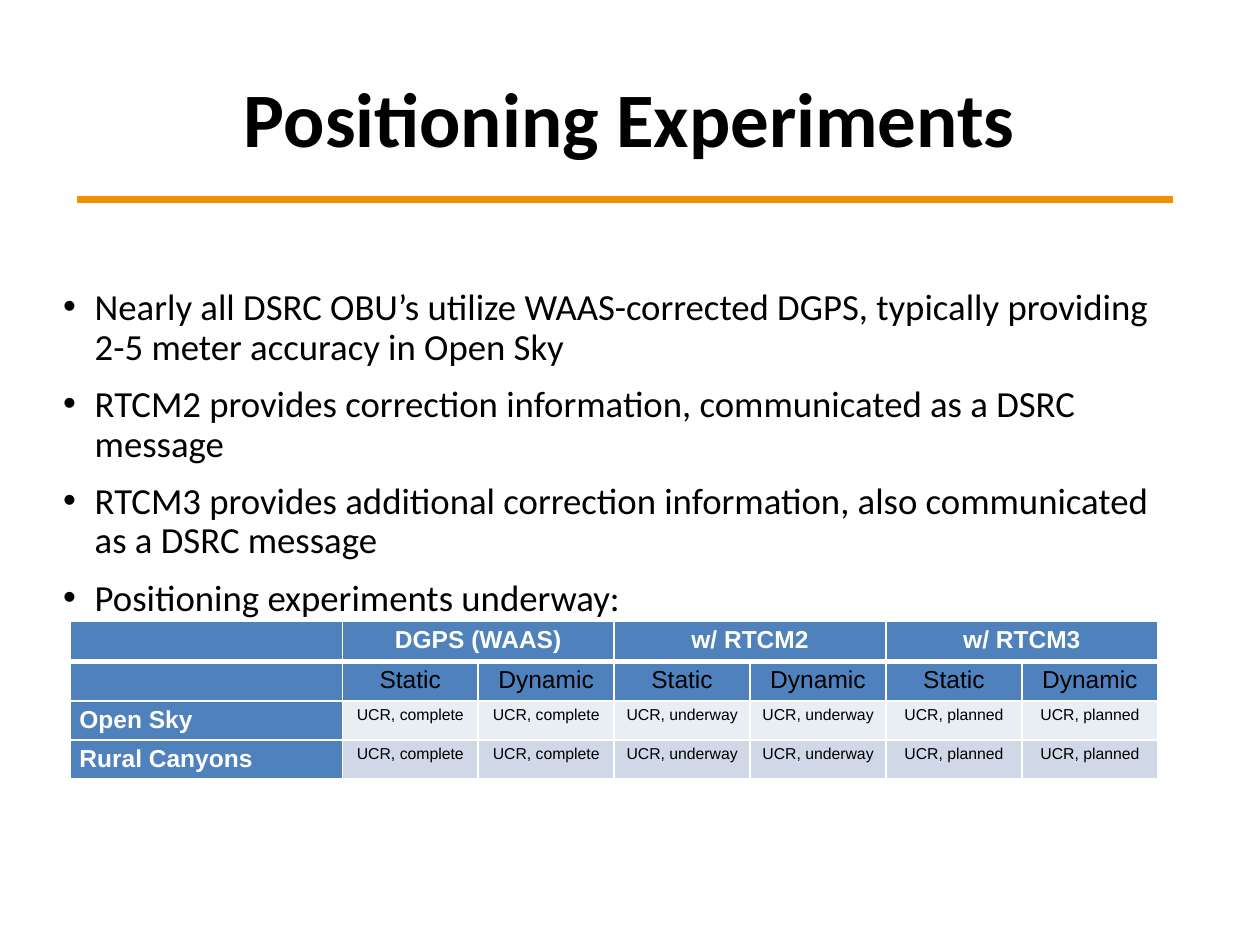
from lxml.etree import SubElement
from pptx import Presentation
from pptx.dml.color import RGBColor
from pptx.enum.shapes import MSO_CONNECTOR
from pptx.enum.text import MSO_ANCHOR, MSO_AUTO_SIZE, PP_ALIGN
from pptx.oxml.ns import qn
from pptx.util import Cm, Pt


def paint(color, code):
    color.rgb = RGBColor.from_string(code)


def write(para, text, face, size, code, bold=False):
    run = para.add_run()
    run.text = text
    font = run.font
    font.name, font.size, font.bold = face, Pt(size), bold
    paint(font.color, code)


deck = Presentation()
deck.slide_width, deck.slide_height = Cm(25.4), Cm(19.05)
slide = deck.slides.add_slide(deck.slide_layouts[1])

# Title and rule
title, body = slide.placeholders
title.left, title.top, title.width, title.height = Cm(1.27), Cm(0.76), Cm(22.86), Cm(3.18)
frame = title.text_frame
frame.auto_size = MSO_AUTO_SIZE.NONE
frame.vertical_anchor = MSO_ANCHOR.MIDDLE
frame.paragraphs[0].alignment = PP_ALIGN.CENTER
write(frame.paragraphs[0], "Positioning Experiments", "Calibri", 44, "000000", True)

rule = slide.shapes.add_connector(MSO_CONNECTOR.STRAIGHT, Cm(1.56), Cm(4.02), Cm(23.65), Cm(4.02))
rule.line.width = Pt(4)
paint(rule.line.color, "EF9100")
SubElement(rule.element.spPr, qn("a:effectLst"))

# Table
heads = ["DGPS (WAAS)", "w/ RTCM2", "w/ RTCM3"]
states = [f"UCR, {state}" for state in ("complete", "underway", "planned") for _ in range(2)]
rows = [
    [""] + [text for head in heads for text in (head, "")],
    [""] + ["Static", "Dynamic"] * 3,
    ["Open Sky"] + states,
    ["Rural Canyons"] + states,
]
fills = ["4F81BD", "4F81BD", "E9EDF4", "D0D8E8"]
table = slide.shapes.add_table(4, 7, Cm(1.42), Cm(12.53), Cm(21.92), Cm(3.12)).table
for c, col in enumerate(table.columns):
    col.width = Cm(2.74 if c else 5.48)
for r, row in enumerate(rows):
    table.rows[r].height = Cm(0.78)
    for c, text in enumerate(row):
        cell = table.cell(r, c)
        cell.margin_left = cell.margin_right = Cm(0.18)
        cell.margin_top = cell.margin_bottom = Cm(0.1)
        props = cell._tc.get_or_add_tcPr()
        for side in "LRTB":
            thick = (r, side) in ((0, "B"), (1, "T"))
            edge = SubElement(props, qn(f"a:ln{side}"), w=str(Pt(3 if thick else 1)))
            SubElement(SubElement(edge, qn("a:solidFill")), qn("a:srgbClr"), val="FFFFFF")
        cell.fill.solid()
        paint(cell.fill.fore_color, fills[r] if c else "4F81BD")
        para = cell.text_frame.paragraphs[0]
        para.alignment = PP_ALIGN.CENTER if c else PP_ALIGN.LEFT
        label = r == 0 or c == 0
        size = 9 if r > 1 and c else 14
        if text:
            write(para, text, "Arial", size, "FFFFFF" if label else "000000", label)
        else:
            SubElement(para._p, qn("a:endParaRPr"), sz=str(size * 100))
for c in (1, 3, 5):
    table.cell(0, c).merge(table.cell(0, c + 1))

# Bullet list
points = [
    "Nearly all DSRC OBU’s utilize WAAS-corrected DGPS, typically providing 2-5 meter accuracy in Open Sky",
    "RTCM2 provides correction information, communicated as a DSRC message",
    "RTCM3 provides additional correction information, also communicated as a DSRC message",
    "Positioning experiments underway:",
]
body.left, body.top, body.width, body.height = Cm(1.09), Cm(5.72), Cm(22.56), Cm(2.74)
frame = body.text_frame
frame.auto_size = MSO_AUTO_SIZE.NONE
frame.vertical_anchor = MSO_ANCHOR.TOP
frame.margin_left = frame.margin_right = Cm(0.18)
frame.margin_top = frame.margin_bottom = Cm(0.1)
for n, text in enumerate(points):
    para = frame.add_paragraph() if n else frame.paragraphs[0]
    props = para._p.get_or_add_pPr()
    props.set("marL", str(Cm(0.64)))
    props.set("indent", str(-Cm(0.64)))
    SubElement(props, qn("a:buFont"), typeface="Arial")
    SubElement(props, qn("a:buChar"), char="•")
    para.line_spacing = 0.9
    para.space_before = Pt(10 if n else 0)
    write(para, text, "Calibri", 21, "000000")

deck.save("out.pptx")
